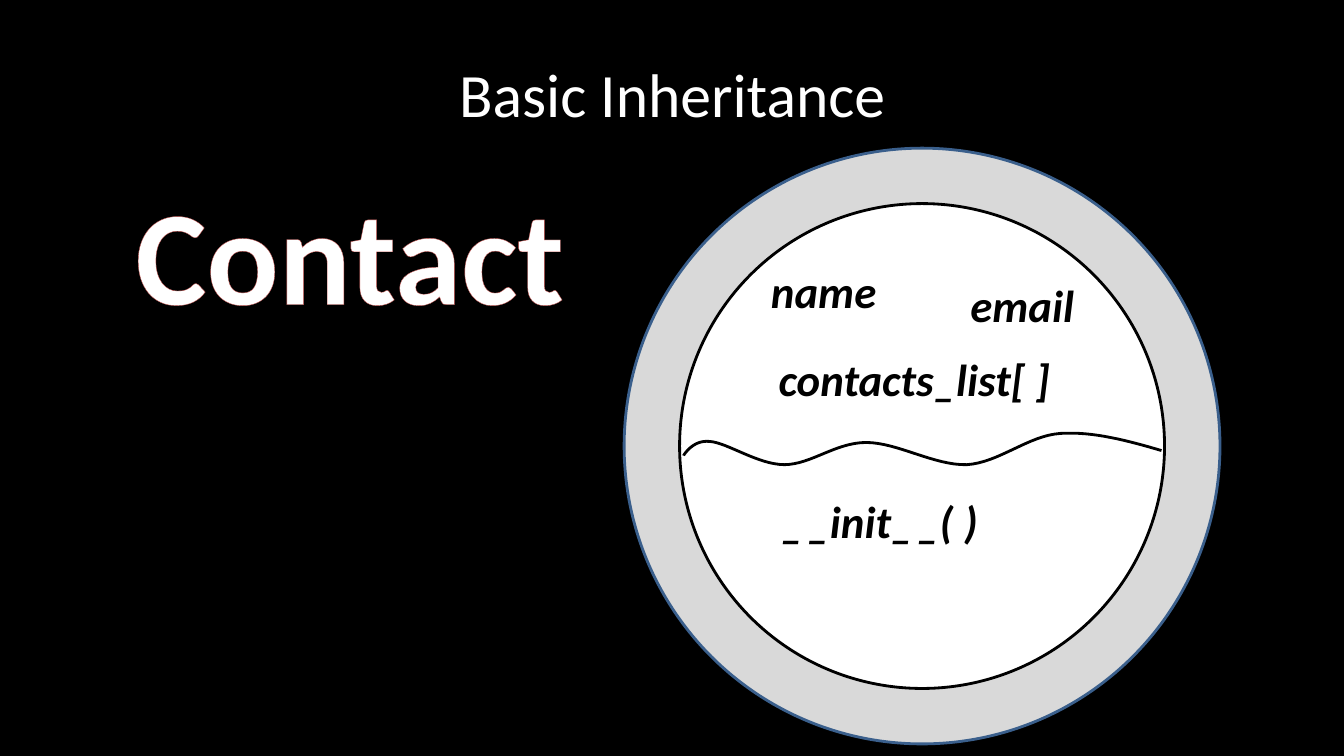
import dataclasses

import pptx
import pptx.dml.color
import pptx.enum.shapes
import pptx.enum.text
import pptx.oxml
import pptx.oxml.ns
import pptx.util

Inches = pptx.util.Inches
ALIGN = pptx.enum.text.PP_ALIGN
ANCHOR = pptx.enum.text.MSO_ANCHOR


@dataclasses.dataclass(frozen=True)
class Theme:
    font: str = "Calibri"
    black: str = "000000"
    white: str = "FFFFFF"
    ring: str = "D9D9D9"
    ring_edge: str = "3A5F8C"
    name_edge: str = "C0504D"
    title_size: float = 44
    class_size: float = 96
    member_size: float = 32
    gap_size: float = 12
    line_width: float = 2
    name_edge_width: float = 0.52


THEME = Theme()

# Offsets from the ring's top left corner: a start, then cubic Bézier triples.
WAVE_START = (5.33, 3.0)
WAVE_CURVES = [
    ((4.99, 2.9), (4.65, 2.81), (4.33, 2.83)),
    ((4.01, 2.85), (3.72, 3.12), (3.4, 3.14)),
    ((3.08, 3.15), (2.71, 2.92), (2.4, 2.92)),
    ((2.1, 2.92), (1.85, 3.14), (1.59, 3.14)),
    ((1.33, 3.14), (1.02, 2.92), (0.85, 2.91)),
    ((0.68, 2.89), (0.59, 3.05), (0.59, 3.05)),
]

# Member text runs with their sizes, and boxes as offsets from the ring.
MEMBERS = [
    ([("name", THEME.member_size)], (1.35, 1.1, 1.26, 0.64)),
    ([("email", THEME.member_size)], (3.33, 1.24, 1.24, 0.64)),
    ([("contacts_list[ ]", THEME.member_size)], (1.42, 1.97, 2.92, 0.64)),
    ([("_", THEME.member_size), (" ", THEME.gap_size),
      ("_init_", THEME.member_size), (" ", THEME.gap_size),
      ("_( )", THEME.member_size)], (1.42, 3.38, 2.23, 0.64)),
]


def rgb(color):
    return pptx.dml.color.RGBColor.from_string(color)


def write_text(para, text, size, color, bold=False, italic=False):
    para.alignment = ALIGN.CENTER
    span = para.add_run()
    span.text = text
    span.font.name = THEME.font
    span.font.size = pptx.util.Pt(size)
    span.font.color.rgb = rgb(color)
    span.font.bold = bold
    span.font.italic = italic
    return span


def outline_text(span, color, width):
    line = pptx.oxml.parse_xml(
        f'<a:ln {pptx.oxml.ns.nsdecls("a")} w="{int(pptx.util.Pt(width))}">'
        f'<a:solidFill><a:srgbClr val="{color}"/></a:solidFill></a:ln>')
    span.font._element.insert(0, line)


def add_label(page, box):
    """Add an unwrapped text box and return its first paragraph."""
    label = page.shapes.add_textbox(*map(Inches, box))
    frame = label.text_frame
    frame.word_wrap = False
    frame.auto_size = pptx.enum.text.MSO_AUTO_SIZE.SHAPE_TO_FIT_TEXT
    return frame.paragraphs[0]


def set_line(shape, color):
    shape.shadow.inherit = False
    shape.line.color.rgb = rgb(color)
    shape.line.width = pptx.util.Pt(THEME.line_width)


def add_circle(page, box, fill, edge):
    circle = page.shapes.add_shape(
        pptx.enum.shapes.MSO_SHAPE.OVAL, *map(Inches, box))
    circle.fill.solid()
    circle.fill.fore_color.rgb = rgb(fill)
    set_line(circle, edge)


def bezier_points(start, curves, steps=16):
    points = [start]
    for first, second, end in curves:
        corners = (points[-1], first, second, end)
        for step in range(1, steps + 1):
            t = step / steps
            weights = ((1 - t) ** 3, 3 * t * (1 - t) ** 2,
                       3 * t ** 2 * (1 - t), t ** 3)
            points.append(tuple(
                sum(w * corner[axis] for w, corner in zip(weights, corners))
                for axis in (0, 1)))
    return points


def add_wave(page, left, top):
    points = [(Inches(left + x), Inches(top + y))
              for x, y in bezier_points(WAVE_START, WAVE_CURVES)]
    builder = page.shapes.build_freeform(*points[0])
    builder.add_line_segments(points[1:], close=False)
    wave = builder.convert_to_shape()
    wave.fill.background()
    set_line(wave, THEME.black)


def add_title(page, box):
    title = page.shapes.title
    title.left, title.top, title.width, title.height = map(Inches, box)
    title.text_frame.vertical_anchor = ANCHOR.MIDDLE
    write_text(title.text_frame.paragraphs[0], "Basic Inheritance",
               size=THEME.title_size, color=THEME.white)


def add_class_name(page, box):
    span = write_text(add_label(page, box), "Contact", size=THEME.class_size,
                      color=THEME.white, bold=True)
    outline_text(span, THEME.name_edge, THEME.name_edge_width)


def add_class_circle(page, box):
    """Draw the ring with attributes above the wave and methods below."""
    left, top, width, height = box
    rim = 0.55
    add_circle(page, box, THEME.ring, THEME.ring_edge)
    add_circle(page, (left + rim, top + rim, width - 2 * rim, height - 2 * rim),
               THEME.white, THEME.black)
    add_wave(page, left, top)
    for spans, (x, y, label_width, label_height) in MEMBERS:
        para = add_label(page, (left + x, top + y, label_width, label_height))
        for text, size in spans:
            write_text(para, text, size=size, color=THEME.black,
                       bold=True, italic=True)


def main():
    deck = pptx.Presentation()
    deck.slide_width = Inches(13.33)
    deck.slide_height = Inches(7.5)
    page = deck.slides.add_slide(deck.slide_layouts.get_by_name("Title Only"))
    page.background.fill.solid()
    page.background.fill.fore_color.rgb = rgb(THEME.black)
    add_title(page, (0.67, 0.3, 12, 1.25))
    add_class_circle(page, (6.19, 1.47, 5.91, 5.91))
    add_class_name(page, (1.22, 1.64, 4.5, 1.72))
    deck.save("out.pptx")


if __name__ == "__main__":
    main()
